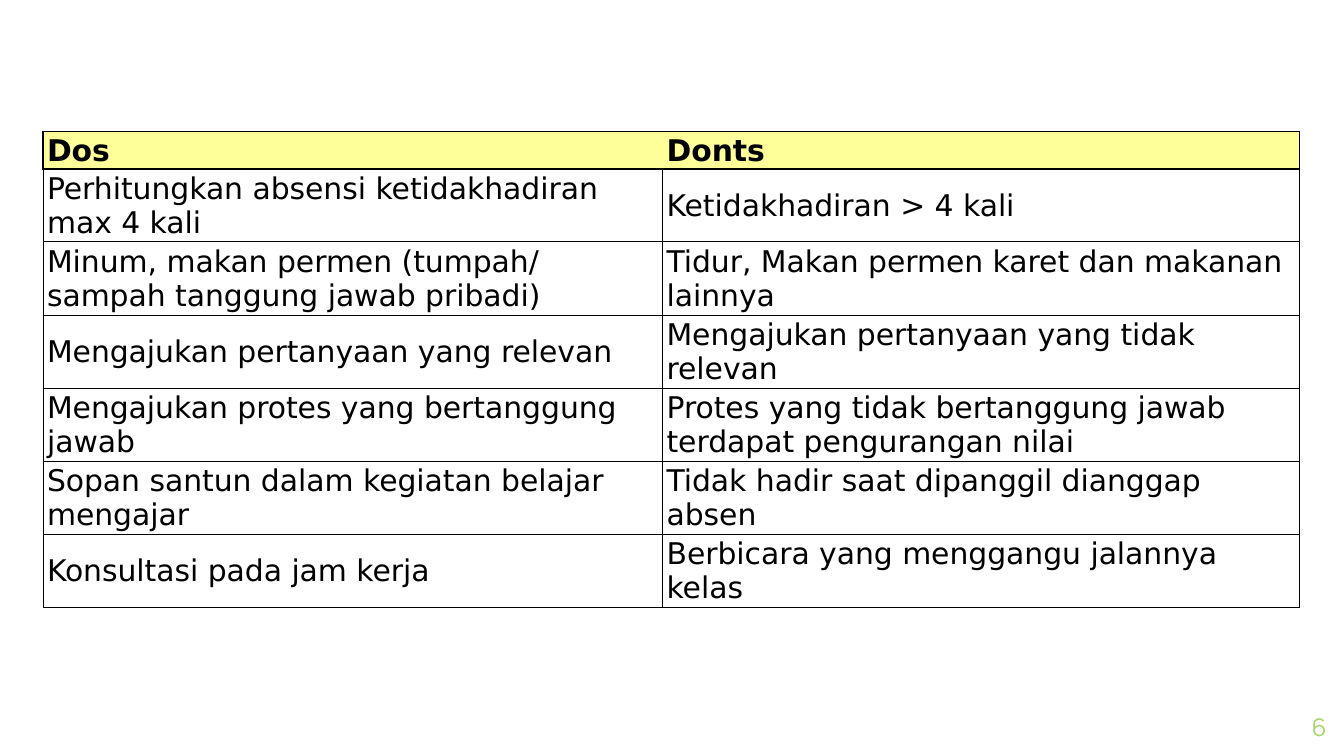
from lxml import etree
from pptx import Presentation
from pptx.dml.color import RGBColor
from pptx.enum.text import MSO_ANCHOR, PP_ALIGN
from pptx.oxml.ns import qn
from pptx.util import Inches, Pt

BLACK = RGBColor(0x00, 0x00, 0x00)
YELLOW = RGBColor(0xFF, 0xFF, 0x99)
GREEN = RGBColor(0xA7, 0xD8, 0x6D)
MIDDLE, BOTTOM = MSO_ANCHOR.MIDDLE, MSO_ANCHOR.BOTTOM
RIGHT = PP_ALIGN.RIGHT

THIN, THICK = 0.5, 1
COL_WIDTHS = (4.61, 4.74)
# Minimum heights: the rows grow to fit their text
ROW_HEIGHTS = (0.19, 0.39, 0.41, 0.39, 0.41, 0.41, 0.39)

RULES = [
    ("Dos", "Donts"),
    ("Perhitungkan absensi ketidakhadiran max 4 kali", "Ketidakhadiran > 4 kali"),
    ("Minum, makan permen (tumpah/ sampah tanggung jawab pribadi)",
     "Tidur, Makan permen karet dan makanan lainnya"),
    ("Mengajukan pertanyaan yang relevan", "Mengajukan pertanyaan yang tidak relevan"),
    ("Mengajukan protes yang bertanggung jawab",
     "Protes yang tidak bertanggung jawab terdapat pengurangan nilai"),
    ("Sopan santun dalam kegiatan belajar mengajar",
     "Tidak hadir saat dipanggil dianggap absen"),
    ("Konsultasi pada jam kerja", "Berbicara yang menggangu jalannya kelas"),
]


def add_run(p, text, font, size, color, bold=False):
    r = p.add_run()
    r.text = text
    r.font.name = font
    r.font.size = Pt(size)
    r.font.bold = bold
    r.font.color.rgb = color


def set_borders(cell, left, right, top, bottom):
    """Draw the cell's sides with widths in points; 0 means no line."""
    tc_pr = cell._tc.get_or_add_tcPr()
    for side, width in zip("LRTB", (left, right, top, bottom)):
        ln = etree.SubElement(tc_pr, qn(f"a:ln{side}"), w=str(Pt(width)))
        if width:
            fill = etree.SubElement(ln, qn("a:solidFill"))
            etree.SubElement(fill, qn("a:srgbClr"), val=str(BLACK))
        else:
            etree.SubElement(ln, qn("a:noFill"))


def format_cell(cell, text, header):
    cell.margin_left = cell.margin_right = Inches(0.03)
    cell.margin_top, cell.margin_bottom = Inches(0.01), 0
    cell.vertical_anchor = BOTTOM if header else MIDDLE
    add_run(cell.text_frame.paragraphs[0], text, "DejaVu Sans", 16, BLACK, header)


def add_rules_table(s):
    frame = s.shapes.add_table(
        len(RULES), len(COL_WIDTHS), Inches(0.32), Inches(0.98),
        Inches(9.36), Inches(3.56))
    table = frame.table
    table.horz_banding = False
    for column, width in zip(table.columns, COL_WIDTHS):
        column.width = Inches(width)
    for row, height in zip(table.rows, ROW_HEIGHTS):
        row.height = Inches(height)
    # Resizing rows and columns shrinks the frame, so set it again
    frame.width, frame.height = Inches(9.36), Inches(3.56)

    for i, texts in enumerate(RULES):
        header = i == 0
        for j, text in enumerate(texts):
            cell = table.cell(i, j)
            format_cell(cell, text, header)
            if header:
                # One thick frame around the whole header row
                set_borders(cell, THICK if j == 0 else 0, THICK if j == 1 else 0,
                            THICK, THICK)
                cell.fill.solid()
                cell.fill.fore_color.rgb = YELLOW
            else:
                set_borders(cell, THIN, THIN, THICK if i == 1 else THIN, THIN)
                cell.fill.background()


def add_page_number(s, number):
    sp = s.shapes.add_textbox(Inches(9.27), Inches(5.19), Inches(0.6), Inches(0.43))
    tf = sp.text_frame
    tf.word_wrap = True
    tf.margin_left = tf.margin_right = tf.margin_top = tf.margin_bottom = 0
    tf.vertical_anchor = MIDDLE
    p = tf.paragraphs[0]
    p.alignment = RIGHT
    add_run(p, number, "Manrope", 13, GREEN)


def main():
    prs = Presentation()
    # Widescreen 16:9
    prs.slide_width = Inches(10)
    prs.slide_height = prs.slide_width * 9 // 16
    s = prs.slides.add_slide(prs.slide_layouts[6])
    add_page_number(s, "6")
    add_rules_table(s)
    prs.save("out.pptx")


if __name__ == "__main__":
    main()
